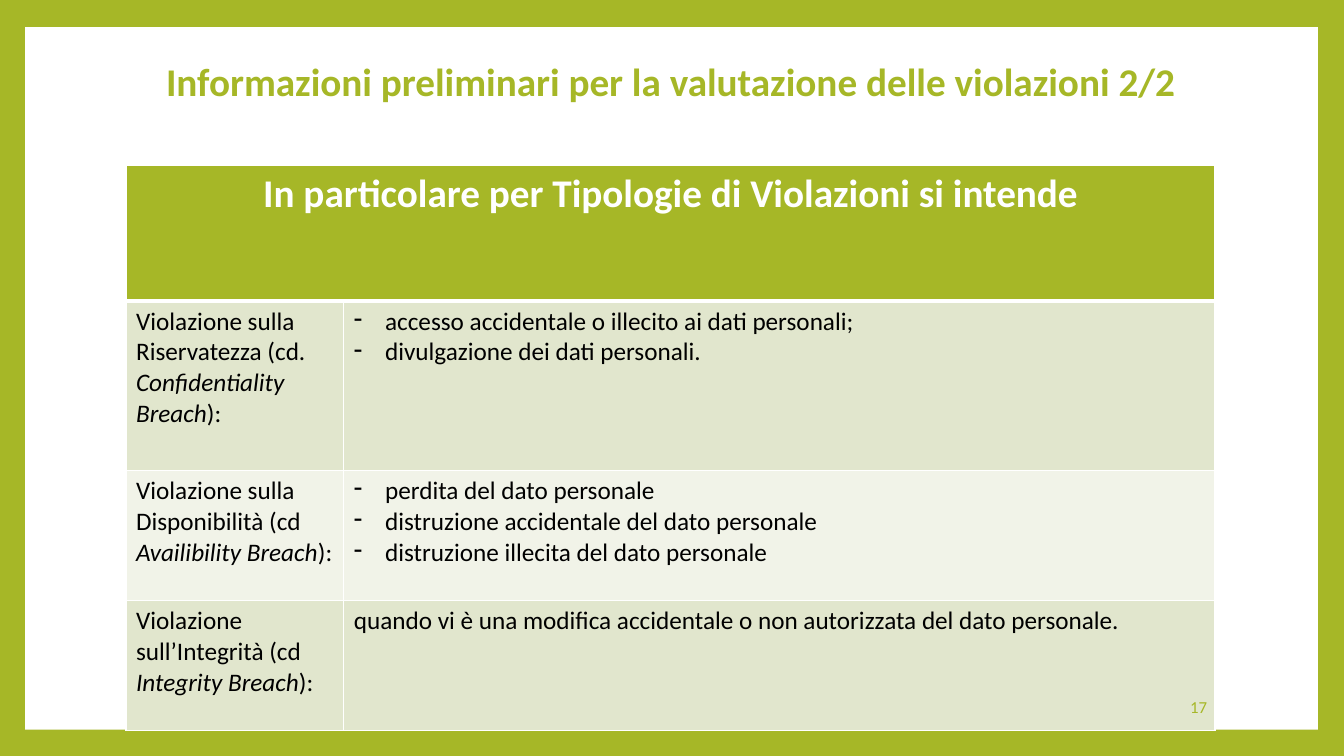
from lxml import etree
from pptx import Presentation
from pptx.dml.color import RGBColor
from pptx.enum.shapes import MSO_SHAPE
from pptx.enum.text import MSO_ANCHOR, PP_ALIGN
from pptx.oxml.ns import qn
from pptx.util import Inches, Pt

GREEN = RGBColor(0xA6, 0xB7, 0x27)
WHITE = RGBColor(0xFF, 0xFF, 0xFF)
BLACK = RGBColor(0, 0, 0)
BANDS = (RGBColor(0xE1, 0xE6, 0xCD), RGBColor(0xF1, 0xF3, 0xE8))
RECTANGLE = MSO_SHAPE.RECTANGLE
LEFT, CENTER, RIGHT = PP_ALIGN.LEFT, PP_ALIGN.CENTER, PP_ALIGN.RIGHT
TOP, MIDDLE = MSO_ANCHOR.TOP, MSO_ANCHOR.MIDDLE
FONT = "Calibri"

PAGE_WIDTH, PAGE_HEIGHT = 13.33, 7.5
PANEL_BOX = (0.25, 0.27, 12.82, 6.97)
TITLE_BOX = (1.25, 0.62, 10.8, 1.02)
TABLE_BOX = (1.25, 1.64, 10.8, 5.61)
NUMBER_BOX = (10.2, 6.81, 1.87, 0.4)
COLUMN_SHARES = (0.2, 0.8)
ROW_SHARES = (0.24, 0.3, 0.23, 0.23)
DASH_INDENT = 0.31

TITLE = "Informazioni preliminari per la valutazione delle violazioni 2/2"
HEADING = "In particolare per Tipologie di Violazioni si intende"
# Each row: lead-in, term in italics, definitions
BREACHES = (
    ("Violazione sulla Riservatezza (cd. ", "Confidentiality Breach",
     ("accesso accidentale o illecito ai dati personali;",
      "divulgazione dei dati personali.")),
    ("Violazione sulla Disponibilità (cd ", "Availibility Breach",
     ("perdita del dato personale",
      "distruzione accidentale del dato personale",
      "distruzione illecita del dato personale")),
    ("Violazione sull’Integrità (cd ", "Integrity Breach",
     ("quando vi è una modifica accidentale o non autorizzata del dato personale.",)),
)


def write(para, text, size=18, color=BLACK, bold=False, italic=False, align=LEFT):
    para.alignment = align
    span = para.add_run()
    span.text = text
    font = span.font
    font.name, font.size, font.bold, font.italic = FONT, Pt(size), bold, italic
    font.color.rgb = color


def add_dash(para):
    """Give the paragraph a dash bullet with a hanging indent."""
    properties = para._p.get_or_add_pPr()
    properties.set("marL", str(Inches(DASH_INDENT)))
    properties.set("indent", str(-Inches(DASH_INDENT)))
    etree.SubElement(properties, qn("a:buChar")).set("char", "-")


def style_cell(cell, fill, top=1, bottom=1):
    """Fill the cell and draw white borders, with widths in points."""
    properties = cell._tc.get_or_add_tcPr()
    for side, width in (("L", 1), ("R", 1), ("T", top), ("B", bottom)):
        line = etree.SubElement(properties, qn(f"a:ln{side}"), w=str(Pt(width)))
        solid = etree.SubElement(line, qn("a:solidFill"))
        etree.SubElement(solid, qn("a:srgbClr"), val=str(WHITE))
    cell.fill.solid()
    cell.fill.fore_color.rgb = fill


def add_panel(page, box):
    page.background.fill.solid()
    page.background.fill.fore_color.rgb = GREEN
    panel = page.shapes.add_shape(RECTANGLE, *map(Inches, box))
    panel.shadow.inherit = False
    panel.fill.solid()
    panel.fill.fore_color.rgb = WHITE
    panel.line.fill.background()


def add_label(page, box, text, anchor, line_spacing=1.0, **text_format):
    frame = page.shapes.add_textbox(*map(Inches, box)).text_frame
    frame.word_wrap = True
    frame.vertical_anchor = anchor
    frame.margin_top = frame.margin_bottom = 0
    para = frame.paragraphs[0]
    para.line_spacing = line_spacing
    write(para, text, **text_format)


def add_breach_table(page, box):
    width, height = box[2:]
    table = page.shapes.add_table(
        len(ROW_SHARES), len(COLUMN_SHARES), *map(Inches, box)).table
    for column, share in zip(table.columns, COLUMN_SHARES):
        column.width = Inches(width * share)
    for row, share in zip(table.rows, ROW_SHARES):
        row.height = Inches(height * share)

    heading = table.cell(0, 0)
    heading.merge(table.cell(0, 1))
    for cell in table.rows[0].cells:
        style_cell(cell, GREEN, bottom=3)
    write(heading.text_frame.paragraphs[0], HEADING,
          size=28, color=WHITE, bold=True, align=CENTER)

    for index, (lead, term, definitions) in enumerate(BREACHES):
        name_cell, definition_cell = table.rows[index + 1].cells
        for cell in (name_cell, definition_cell):
            style_cell(cell, BANDS[index % 2], top=3 if index == 0 else 1)
        name = name_cell.text_frame.paragraphs[0]
        write(name, lead)
        write(name, term, italic=True)
        write(name, "):")
        frame = definition_cell.text_frame
        for position, definition in enumerate(definitions):
            para = frame.add_paragraph() if position else frame.paragraphs[0]
            write(para, definition)
            if len(definitions) > 1:
                add_dash(para)


def main():
    deck = Presentation()
    deck.slide_width, deck.slide_height = Inches(PAGE_WIDTH), Inches(PAGE_HEIGHT)
    page = deck.slides.add_slide(deck.slide_layouts[6])
    add_panel(page, PANEL_BOX)
    add_label(page, TITLE_BOX, TITLE, TOP, line_spacing=0.9,
              size=28, color=GREEN, bold=True, align=CENTER)
    add_breach_table(page, TABLE_BOX)
    add_label(page, NUMBER_BOX, "17", MIDDLE, size=12, color=GREEN, align=RIGHT)
    deck.save("out.pptx")


if __name__ == "__main__":
    main()
